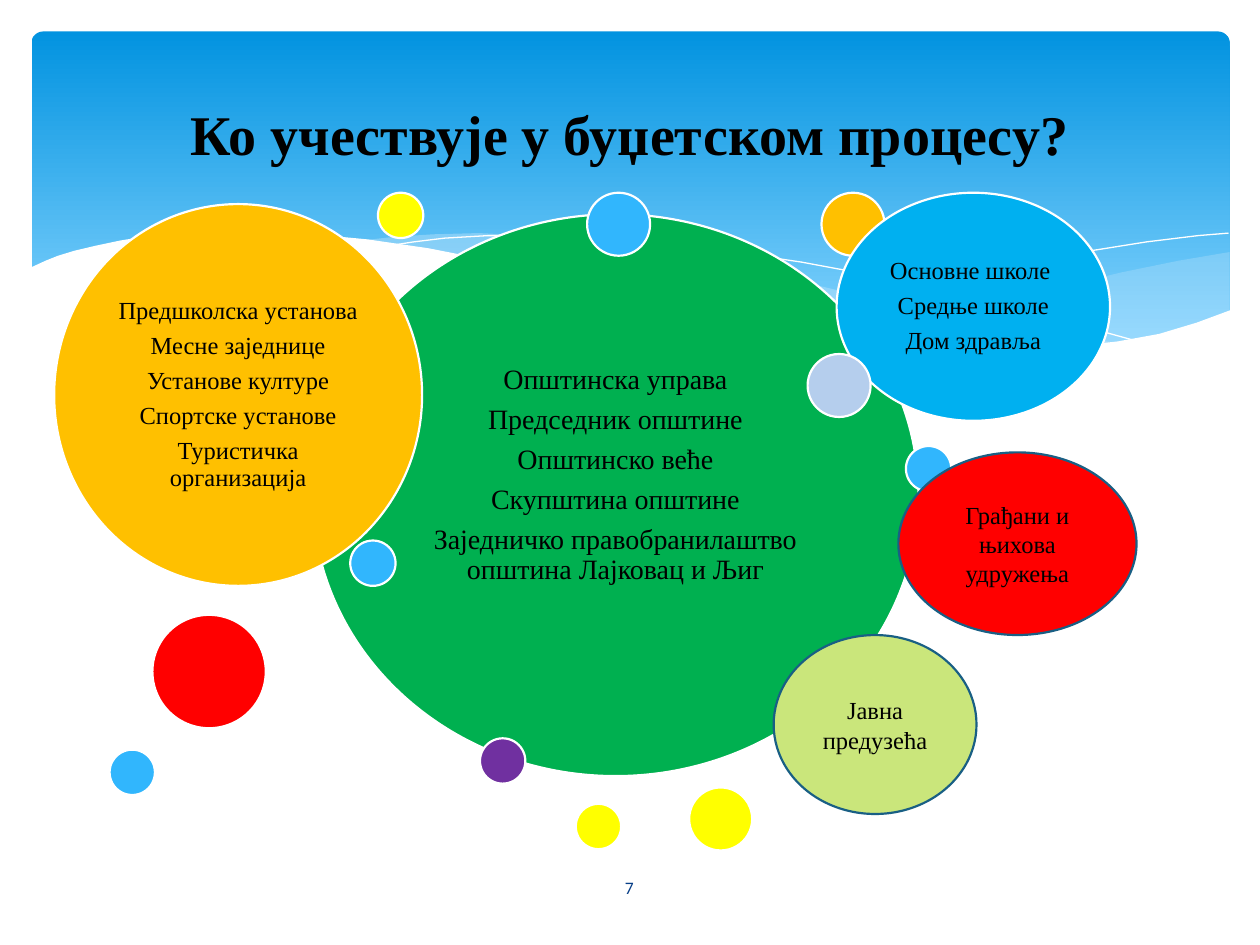
from dataclasses import dataclass

import lxml.etree
import pptx
import pptx.dml.color
import pptx.enum.shapes
import pptx.enum.text
import pptx.oxml.ns
import pptx.util

Inches = pptx.util.Inches
Pt = pptx.util.Pt
qn = pptx.oxml.ns.qn
CENTER = pptx.enum.text.PP_ALIGN.CENTER
MIDDLE = pptx.enum.text.MSO_ANCHOR.MIDDLE
SHAPE = pptx.enum.shapes.MSO_SHAPE


@dataclass(frozen=True)
class Theme:
    black: str = "000000"
    white: str = "FFFFFF"
    sky_top: str = "0293E0"
    sky_bottom: str = "83D3FE"
    mist: str = "C6E7FC"
    navy: str = "073E87"
    outline: str = "195F84"
    green: str = "00B050"
    orange: str = "FFC000"
    purple: str = "7030A0"
    blue: str = "31B6FD"
    yellow: str = "FFFF00"
    red: str = "FF0000"
    cyan: str = "00B0F0"
    pale: str = "B5CEED"
    lime: str = "CAE67B"
    serif: str = "Times New Roman"
    sans: str = "Calibri"
    title_size: int = 32
    core_size: int = 16
    group_size: int = 14
    number_size: int = 10


@dataclass(frozen=True)
class Box:
    left: float
    top: float
    width: float
    height: float

    def within(self, left, top, width, height):
        return Box(self.left + left, self.top + top, width, height)

    def lengths(self):
        return [Inches(v) for v in (self.left, self.top, self.width, self.height)]


THEME = Theme()

RIGHT_SWELL = [
    (9.76, 2), (9.35, 2.07), (8.91, 2.16), (8.32, 2.3), (7.53, 2.48), (7.06, 2.57),
    (6.61, 2.65), (7.05, 2.71), (7.45, 2.75), (7.81, 2.77), (8.14, 2.78), (8.54, 2.76),
    (8.89, 2.72), (9.21, 2.65), (9.49, 2.57), (9.76, 2.47)]
LONG_SWELL = [
    (8.93, 2.73), (8.37, 2.65), (7.75, 2.54), (7.06, 2.4), (6.29, 2.22), (5.84, 2.11),
    (5.41, 2.03), (5.02, 1.96), (4.65, 1.91), (4.2, 1.87), (3.8, 1.85), (3.44, 1.86),
    (3.13, 1.88), (2.86, 1.91), (3.23, 1.96), (3.62, 2.03), (4.04, 2.11), (4.49, 2.22),
    (4.91, 2.32), (5.66, 2.48), (6.18, 2.58), (6.65, 2.66), (7.09, 2.72), (7.48, 2.76),
    (7.85, 2.78), (8.28, 2.78), (8.67, 2.76)]
LEFT_CREST = [
    (3.09, 1.95), (3.28, 1.92), (3.53, 1.89), (3.87, 1.87), (4.16, 1.87), (4.5, 1.88),
    (4.89, 1.9), (5.33, 1.94), (5.82, 2), (6.36, 2.08), (6.95, 2.19), (7.6, 2.33),
    (8.31, 2.51), (9.07, 2.72)]
RIGHT_CREST = [
    (6.13, 2.57), (6.53, 2.46), (6.95, 2.35), (7.48, 2.23), (8.06, 2.1), (8.66, 1.99),
    (9.1, 1.92), (9.51, 1.87), (9.75, 1.85)]
WHITE_FRONT = [
    (9.77, 2.46), (9.5, 2.56), (9.2, 2.65), (8.87, 2.71), (8.5, 2.75), (8.09, 2.77),
    (7.61, 2.75), (7.08, 2.7), (6.48, 2.62), (5.79, 2.5), (5.03, 2.33), (4.47, 2.2),
    (3.91, 2.07), (3.4, 1.97), (2.92, 1.9), (2.5, 1.86), (2.11, 1.84), (1.77, 1.84),
    (1.46, 1.85), (1.19, 1.87), (0.95, 1.91), (0.76, 1.95), (0.59, 1.99), (0.46, 2.03),
    (0.36, 2.07), (0.23, 2.13), (0.23, 3.29), (9.77, 3.29)]

CORE = ["Општинска управа", "Председник општине", "Општинско веће", "Скупштина општине",
        "Заједничко правобранилаштво општина Лајковац и Љиг"]
LOCAL = ["Предшколска установа", "Месне заједнице", "Установе културе",
         "Спортске установе", "Туристичка организација"]
SERVICES = ["Основне школе ", "Средње школе", "Дом здравља"]


def rgb(value):
    return pptx.dml.color.RGBColor.from_string(value)


def paint(shape, fill=None, line=None, width=1.25):
    shape.shadow.inherit = False
    if fill:
        shape.fill.solid()
        shape.fill.fore_color.rgb = rgb(fill)
    else:
        shape.fill.background()
    if line:
        shape.line.color.rgb = rgb(line)
        shape.line.width = Pt(width)
    else:
        shape.line.fill.background()


def write(frame, lines, size, font, color, bold=False, spaced=False):
    frame.word_wrap = True
    frame.vertical_anchor = MIDDLE
    frame.text = "\n".join(lines)
    for paragraph in frame.paragraphs:
        paragraph.alignment = CENTER
        if spaced:
            paragraph.line_spacing = 0.9
            paragraph.space_after = Pt(round(size * 0.35, 1))
        for run in paragraph.runs:
            run.font.size = Pt(size)
            run.font.name = font
            run.font.bold = bold
            run.font.color.rgb = rgb(color)


def add_wave(slide, box, points, fill=None, opacity=100, line=None):
    corners = [(Inches(box.left + x), Inches(box.top + y)) for x, y in points]
    builder = slide.shapes.build_freeform(*corners[0])
    builder.add_line_segments(corners[1:], close=fill is not None)
    wave = builder.convert_to_shape()
    paint(wave, fill, line, 0)
    if opacity < 100:
        tint = wave.element.spPr.find(qn("a:solidFill")).find(qn("a:srgbClr"))
        lxml.etree.SubElement(tint, qn("a:alpha"), val=str(opacity * 1000))


def add_backdrop(slide, box):
    sky = slide.shapes.add_shape(
        SHAPE.ROUNDED_RECTANGLE, *box.within(0.25, 0.25, 9.51, 2.7).lengths())
    sky.adjustments[0] = 0.034
    paint(sky)
    sky.fill.gradient()
    sky.fill.gradient_angle = 270
    stops = zip(sky.fill.gradient_stops, (THEME.sky_top, THEME.sky_bottom), (0, 0.9))
    for stop, color, position in stops:
        stop.color.rgb = rgb(color)
        stop.position = position
    add_wave(slide, box, RIGHT_SWELL, THEME.mist, 29)
    add_wave(slide, box, LONG_SWELL, THEME.mist, 40)
    add_wave(slide, box, LEFT_CREST, line=THEME.white)
    add_wave(slide, box, RIGHT_CREST, line=THEME.white)
    add_wave(slide, box, WHITE_FRONT, THEME.white)


def add_title(slide, box):
    title = slide.shapes.title
    title.left, title.top, title.width, title.height = box.lengths()
    write(title.text_frame, ["Ко учествује у буџетском процесу?"],
          THEME.title_size, THEME.serif, THEME.black, bold=True)
    slide.shapes.element.append(title.element)


def add_bubble(slide, box, fill, line=THEME.white):
    bubble = slide.shapes.add_shape(SHAPE.OVAL, *box.lengths())
    paint(bubble, fill, line)
    return bubble


def add_group(slide, box, fill, lines, size=THEME.group_size, inset=0.06, lift=0):
    frame = add_bubble(slide, box, fill).text_frame
    frame.margin_left = frame.margin_right = frame.margin_top = Inches(inset)
    frame.margin_bottom = Inches(inset + lift)
    write(frame, lines, size, THEME.serif, THEME.black, spaced=True)


def add_dots(slide, box, dots):
    for left, top, size, color in dots:
        add_bubble(slide, box.within(left, top, size, size), color)


def add_participants(slide, box):
    small, medium, large = 0.36, 0.5, 0.9
    add_group(slide, box.within(2.05, 0.17, 4.81, 4.46), THEME.green, CORE,
              THEME.core_size, 0.07, lift=0.31)
    add_dots(slide, box, [
        (6.09, 0, medium, THEME.orange), (3.38, 4.33, small, THEME.purple),
        (6.76, 2.01, small, THEME.blue), (5.04, 4.72, medium, THEME.yellow),
        (2.57, 0, small, THEME.yellow)])
    add_group(slide, box.within(0, 0.09, 2.92, 3.03), THEME.orange, LOCAL)
    add_dots(slide, box, [
        (2.35, 2.76, small, THEME.blue), (4.23, 0, medium, THEME.blue),
        (0.78, 3.35, large, THEME.red)])
    add_group(slide, box.within(6.21, 0, 2.17, 1.81), THEME.cyan, SERVICES)
    add_dots(slide, box, [
        (5.98, 1.28, medium, THEME.pale), (0.44, 4.42, small, THEME.blue),
        (4.14, 4.85, small, THEME.yellow)])
    for place, color, label in (
            ((6.7, 2.06, 1.89, 1.45), THEME.red, "Грађани и њихова удружења"),
            ((5.71, 3.51, 1.61, 1.42), THEME.lime, "Јавна предузећа")):
        outsider = add_bubble(slide, box.within(*place), color, THEME.outline)
        write(outsider.text_frame, [label], THEME.group_size, THEME.serif, THEME.black)


def add_page_number(slide, box):
    number = slide.shapes.add_textbox(*box.lengths())
    write(number.text_frame, ["7"], THEME.number_size, THEME.sans, THEME.navy)


def main():
    deck = pptx.Presentation()
    deck.slide_width, deck.slide_height = Inches(10), Inches(7.5)
    slide = deck.slides.add_slide(deck.slide_layouts[5])
    add_backdrop(slide, Box(0, 0, 10, 7.5))
    add_title(slide, Box(0.5, 0.37, 9, 1.37))
    add_page_number(slide, Box(4.36, 6.84, 1.27, 0.4))
    add_participants(slide, Box(0.43, 1.53, 8.59, 5.22))
    deck.save("out.pptx")


if __name__ == "__main__":
    main()
